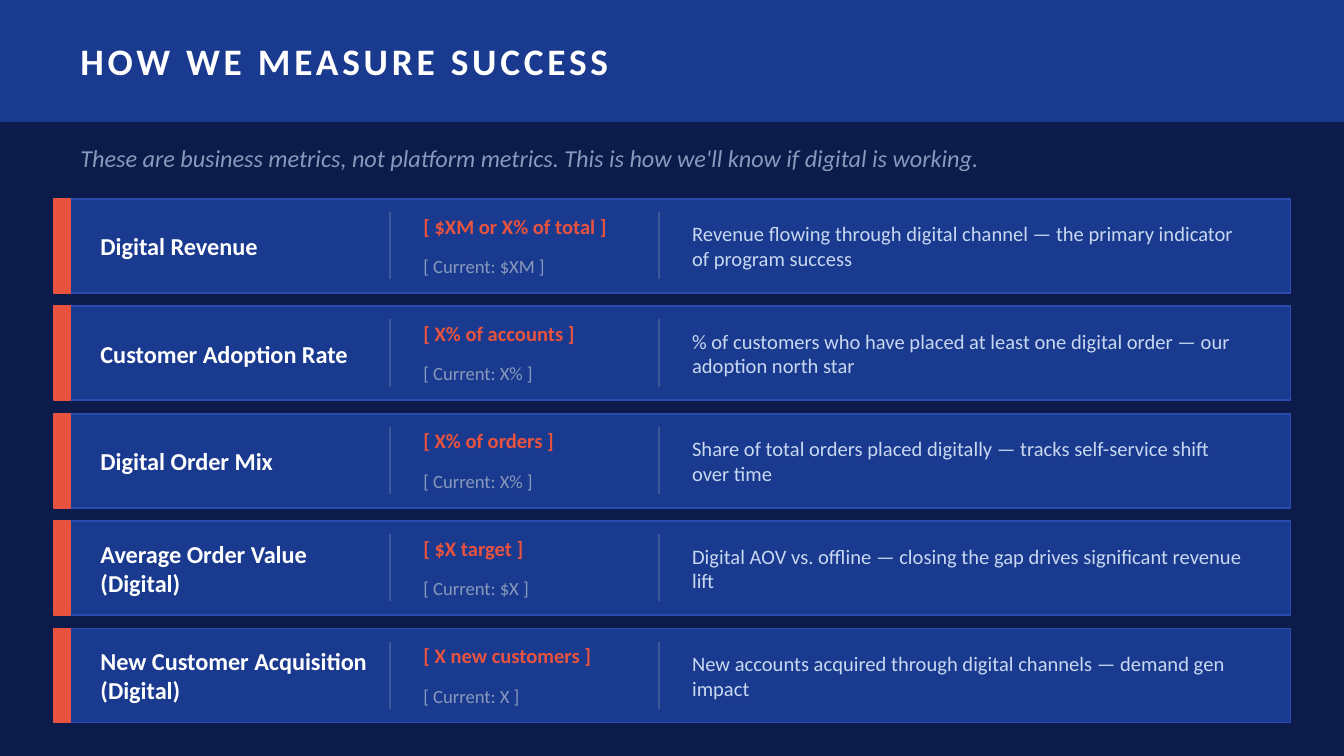
from typing import NamedTuple

import pptx
import pptx.dml.color
import pptx.enum.shapes
import pptx.enum.text
import pptx.oxml.ns
import pptx.util
from pptx.util import Cm

NAVY, BLUE, EDGE, DIVIDER = "0D1B4B", "1A3A8F", "2A4CAF", "3B5998"
CORAL, WHITE, MUTED, PALE = "E8533F", "FFFFFF", "8899BB", "C8D8F0"

FIRST_ROW_TOP, ROW_PITCH, ROW_HEIGHT = 3.76, 2.03, 1.78
DIVIDER_LEFTS = (7.37, 12.45)


class Metric(NamedTuple):
    name: str
    target: str
    current: str
    meaning: str


METRICS = [
    Metric("Digital Revenue", "[ $XM or X% of total ]", "[ Current: $XM ]",
           "Revenue flowing through digital channel — the primary indicator of program success"),
    Metric("Customer Adoption Rate", "[ X% of accounts ]", "[ Current: X% ]",
           "% of customers who have placed at least one digital order — our adoption north star"),
    Metric("Digital Order Mix", "[ X% of orders ]", "[ Current: X% ]",
           "Share of total orders placed digitally — tracks self-service shift over time"),
    Metric("Average Order Value (Digital)", "[ $X target ]", "[ Current: $X ]",
           "Digital AOV vs. offline — closing the gap drives significant revenue lift"),
    Metric("New Customer Acquisition (Digital)", "[ X new customers ]", "[ Current: X ]",
           "New accounts acquired through digital channels — demand gen impact"),
]


def paint(colour_format, hex_colour: str) -> None:
    colour_format.rgb = pptx.dml.color.RGBColor.from_string(hex_colour)


def add_panel(slide, left: float, top: float, width: float, height: float,
              fill: str, edge: str) -> None:
    panel = slide.shapes.add_shape(pptx.enum.shapes.MSO_SHAPE.RECTANGLE,
                                   Cm(left), Cm(top), Cm(width), Cm(height))
    panel.shadow.inherit = False
    panel.fill.solid()
    paint(panel.fill.fore_color, fill)
    paint(panel.line.color, edge)
    panel.line.width = pptx.util.Pt(1)


def add_divider(slide, left: float, top: float, length: float) -> None:
    divider = slide.shapes.add_connector(pptx.enum.shapes.MSO_CONNECTOR.STRAIGHT,
                                         Cm(left), Cm(top), Cm(left), Cm(top + length))
    paint(divider.line.color, DIVIDER)
    divider.line.width = pptx.util.Pt(1)
    divider._element.spPr.append(pptx.oxml.parse_xml(
        f"<a:effectLst {pptx.oxml.ns.nsdecls('a')}/>"))


def add_text(slide, text: str, left: float, top: float, width: float, height: float, *,
             size: int, colour: str, bold: bool = False, italic: bool = False,
             spacing: int = 0) -> None:
    """Add a vertically centred text box; spacing is letter spacing in points."""
    frame = slide.shapes.add_textbox(Cm(left), Cm(top), Cm(width), Cm(height)).text_frame
    frame.word_wrap = True
    frame.vertical_anchor = pptx.enum.text.MSO_ANCHOR.MIDDLE
    run = frame.paragraphs[0].add_run()
    run.text = text
    run.font.name = "Calibri"
    run.font.size = pptx.util.Pt(size)
    run.font.bold = bold
    run.font.italic = italic
    paint(run.font.color, colour)
    if spacing:
        run._r.get_or_add_rPr().set("spc", str(spacing * 100))


def add_metric_row(slide, metric: Metric, top: float) -> None:
    first_divider, second_divider = DIVIDER_LEFTS
    add_panel(slide, 1.02, top, 23.37, ROW_HEIGHT, BLUE, EDGE)
    add_panel(slide, 1.02, top, 0.3, ROW_HEIGHT, CORAL, CORAL)
    add_text(slide, metric.name, 1.65, top + 0.13, 5.59, 1.52,
             size=13, colour=WHITE, bold=True)
    add_divider(slide, first_divider, top + 0.25, 1.27)
    add_text(slide, metric.target, first_divider + 0.38, top + 0.13, 4.57, 0.76,
             size=11, colour=CORAL, bold=True)
    add_text(slide, metric.current, first_divider + 0.38, top + 0.89, 4.57, 0.76,
             size=10, colour=MUTED)
    add_divider(slide, second_divider, top + 0.25, 1.27)
    add_text(slide, metric.meaning, second_divider + 0.38, top + 0.18, 10.92, 1.42,
             size=11, colour=PALE)


def main() -> None:
    deck = pptx.Presentation()
    deck.slide_width, deck.slide_height = Cm(25.4), Cm(14.29)
    slide = deck.slides.add_slide(deck.slide_layouts[6])
    slide.background.fill.solid()
    paint(slide.background.fill.fore_color, NAVY)

    add_panel(slide, 0, 0, 25.4, 2.29, BLUE, BLUE)
    add_text(slide, "HOW WE MEASURE SUCCESS", 1.27, 0, 22.86, 2.29,
             size=20, colour=WHITE, bold=True, spacing=2)
    add_text(slide, "These are business metrics, not platform metrics. "
             "This is how we'll know if digital is working.",
             1.27, 2.49, 22.86, 0.97, size=13, colour=MUTED, italic=True)
    for index, metric in enumerate(METRICS):
        add_metric_row(slide, metric, FIRST_ROW_TOP + index * ROW_PITCH)

    deck.save("out.pptx")


if __name__ == "__main__":
    main()
